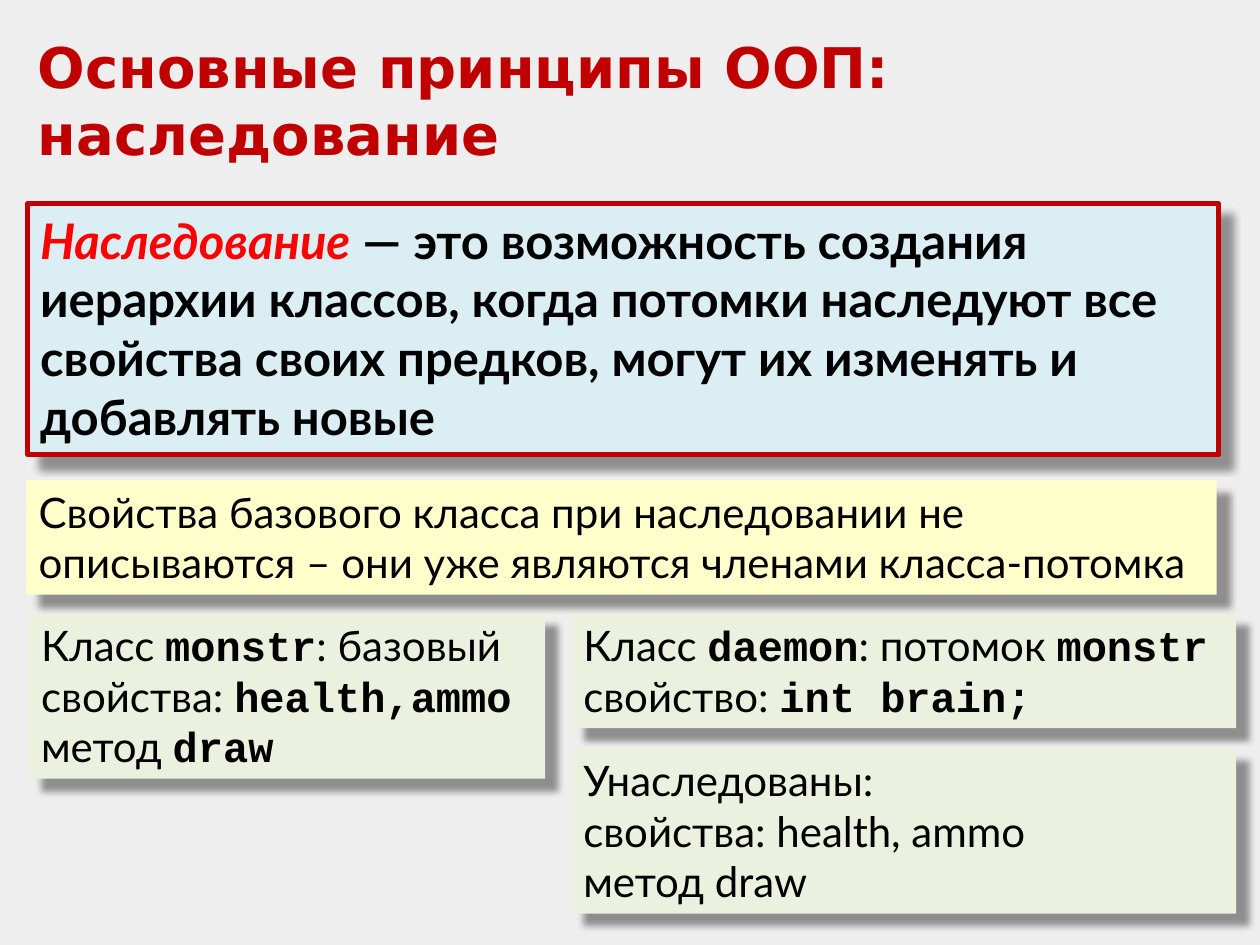
from lxml import etree
from pptx import Presentation
from pptx.dml.color import RGBColor
from pptx.enum.shapes import MSO_SHAPE as Shape
from pptx.enum.text import MSO_ANCHOR as Anchor, MSO_AUTO_SIZE as Auto, PP_ALIGN as Align
from pptx.oxml.ns import nsdecls
from pptx.util import Cm, Pt

SHADOW = f"""<a:effectLst {nsdecls("a")}>
  <a:outerShdw blurRad="{Pt(4)}" dist="{Pt(10)}" dir="2700000" algn="tl" rotWithShape="0">
    <a:srgbClr val="000000"><a:alpha val="40000"/></a:srgbClr>
  </a:outerShdw>
</a:effectLst>"""


def tint(code):
    return RGBColor.from_string(code)


def add_box(place, fill, lines, size=24):
    """Add a shadowed panel; text between backticks is set as code."""
    box = slide.shapes.add_shape(Shape.RECTANGLE, *map(Cm, place))
    box.fill.solid()
    box.fill.fore_color.rgb = tint(fill)
    box.line.fill.background()
    box._element.spPr.append(etree.fromstring(SHADOW))
    frame = box.text_frame
    frame.word_wrap = True
    frame.vertical_anchor = Anchor.TOP
    for i, line in enumerate(lines):
        para = frame.paragraphs[0] if i == 0 else frame.add_paragraph()
        para.alignment = Align.LEFT
        para.font.size = Pt(size)
        para.font.color.rgb = tint("000000")
        for j, part in enumerate(line.split("`")):
            if part:
                run = para.add_run()
                run.text = part
                run.font.name = "Courier New" if j % 2 else "Lato"
                run.font.bold = j % 2 == 1
    return box


deck = Presentation()
deck.slide_width, deck.slide_height = Cm(25.4), Cm(19.05)
slide = deck.slides.add_slide(deck.slide_layouts[5])
slide.background.fill.solid()
slide.background.fill.fore_color.rgb = tint("EEEEEE")

# Title
title = slide.shapes.title
title.left, title.top, title.width, title.height = map(Cm, (0.51, 0.53, 24.4, 3))
title.text_frame.text = "Основные принципы ООП: наследование"
title.text_frame.auto_size = Auto.NONE
title.text_frame.vertical_anchor = Anchor.TOP
head = title.text_frame.paragraphs[0]
head.alignment = Align.LEFT
head.font.name = "DejaVu Sans"
head.font.size = Pt(32)
head.font.bold = True
head.font.color.rgb = tint("C00000")

# Definition
rule = add_box((0.56, 4.11, 24, 5.05), "DBEEF4", [
    "Наследование`` — это возможность создания иерархии классов, когда потомки "
    "наследуют все свойства своих предков, могут их изменять и добавлять новые",
], 28)
rule.line.color.rgb = tint("C00000")
rule.line.width = Pt(3)
term, rest = rule.text_frame.paragraphs[0].runs
term.font.bold = rest.font.bold = True
term.font.italic = True
term.font.color.rgb = tint("FF0000")

# Remark
add_box((0.53, 9.68, 24, 2.31), "FFFFCC", [
    "Свойства базового класса при наследовании не описываются – "
    "они уже являются членами класса-потомка",
])

# Base class on the left, descendant on the right
GREEN = "EBF1DE"
for place, lines in [
    ((0.58, 12.37, 10.41, 3.33),
     ["Класс `monstr`: базовый", "свойства: `health,ammo`", "метод `draw`"]),
    ((11.51, 12.37, 13.41, 2.31),
     ["Класс `daemon`: потомок `monstr`", "свойство: `int brain;`"]),
    ((11.51, 15.09, 13.41, 3.33),
     ["Унаследованы:", "свойства: health, ammo", "метод draw"]),
]:
    add_box(place, GREEN, lines)

deck.save("out.pptx")
